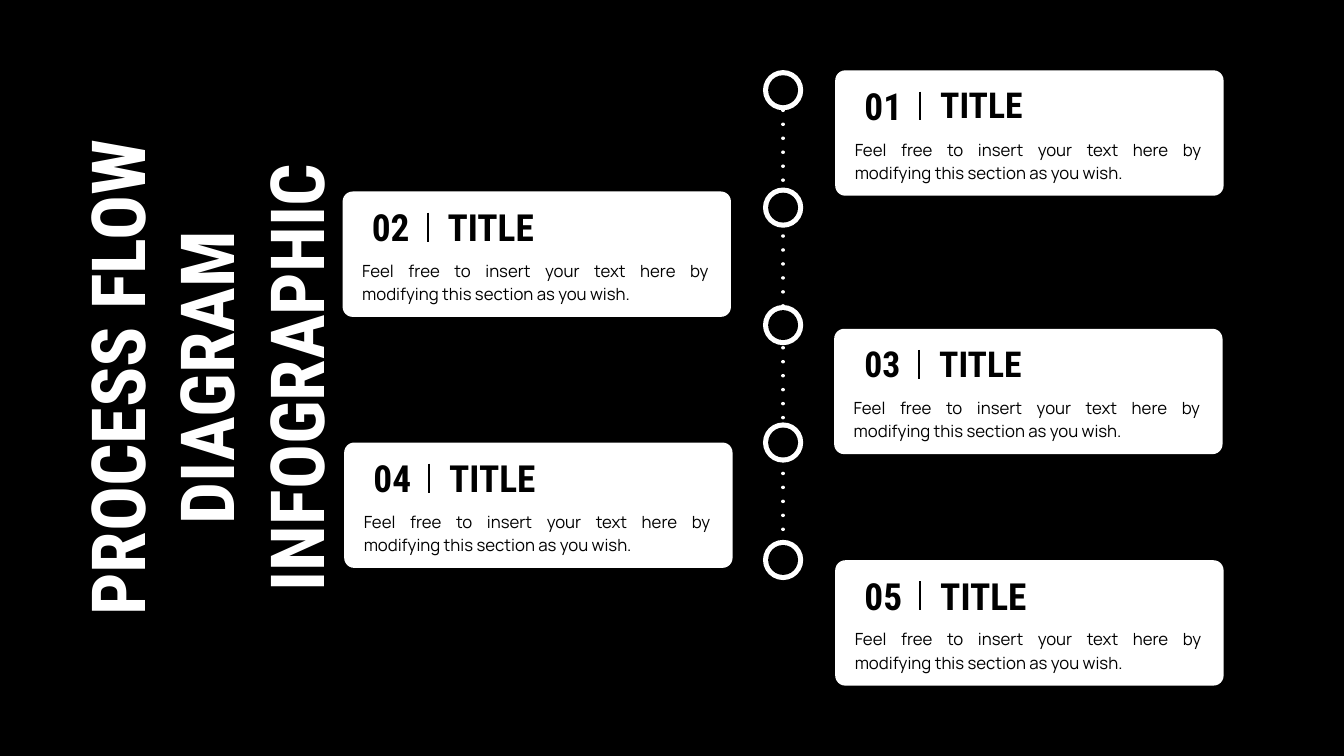
import pptx
import pptx.dml.color
import pptx.enum.dml
import pptx.enum.shapes
import pptx.enum.text
import pptx.oxml
import pptx.oxml.ns
import pptx.util

Cm = pptx.util.Cm
Pt = pptx.util.Pt
BLACK = pptx.dml.color.RGBColor(0, 0, 0)
WHITE = pptx.dml.color.RGBColor(255, 255, 255)
SHAPES = pptx.enum.shapes.MSO_SHAPE
ALIGN = pptx.enum.text.PP_ALIGN
HEADING_FONT = "Roboto Condensed"
BODY_FONT = "Manrope"
DESCRIPTION = "Feel free to insert your text here by modifying this section as you wish."

FRAME_FORMAT = {
    "margin_left": 0,
    "margin_top": 0,
    "margin_right": 0,
    "margin_bottom": 0,
    "word_wrap": True,
    "vertical_anchor": pptx.enum.text.MSO_ANCHOR.TOP,
    "auto_size": pptx.enum.text.MSO_AUTO_SIZE.SHAPE_TO_FIT_TEXT,
}


def write_text(shape, text, color, paragraph_format, font_format):
    frame = shape.text_frame
    for name, value in FRAME_FORMAT.items():
        setattr(frame, name, value)
    paragraph = frame.paragraphs[0]
    for name, value in paragraph_format.items():
        setattr(paragraph, name, value)
    run = paragraph.add_run()
    run.text = text
    for name, value in font_format.items():
        setattr(run.font, name, value)
    run.font.color.rgb = color


def add_line(shapes, x, top, bottom, color, width):
    line = shapes.add_connector(
        pptx.enum.shapes.MSO_CONNECTOR.STRAIGHT, Cm(x), Cm(top), Cm(x), Cm(bottom)
    )
    line.line.color.rgb = color
    line.line.width = Pt(width)
    properties = line._element.spPr
    properties.append(pptx.oxml.parse_xml(f'<a:effectLst {pptx.oxml.ns.nsdecls("a")}/>'))
    return line


presentation = pptx.Presentation()
presentation.slide_width = Cm(50.8)
presentation.slide_height = Cm(28.58)
slide = presentation.slides.add_slide(presentation.slide_layouts[5])
slide.background.fill.solid()
slide.background.fill.fore_color.rgb = BLACK

title = slide.shapes.title
title_format = {
    "left": Cm(-5.87),
    "top": Cm(11.38),
    "width": Cm(22.86),
    "height": Cm(5.79),
    "rotation": 270,
}
for name, value in title_format.items():
    setattr(title, name, value)
write_text(
    title,
    "PROCESS FLOW DIAGRAM INFOGRAPHIC",
    WHITE,
    {"alignment": ALIGN.CENTER},
    {"name": HEADING_FONT, "size": Pt(80), "bold": True},
)

timeline_x, first_y, step_y = 29.6, 3.41, 4.44
timeline = add_line(slide.shapes, timeline_x, 4.17, 20.5, WHITE, 3.75)
timeline.line.dash_style = pptx.enum.dml.MSO_LINE.ROUND_DOT
dash = timeline._element.find(".//" + pptx.oxml.ns.qn("a:prstDash"))
dash.set("val", "dot")
dash.getparent().set("cap", "rnd")

for diameter, color in ((1.52, WHITE), (1.13, BLACK)):
    for index in range(5):
        circle = slide.shapes.add_shape(
            SHAPES.OVAL,
            Cm(timeline_x - diameter / 2),
            Cm(first_y + index * step_y - diameter / 2),
            Cm(diameter),
            Cm(diameter),
        )
        circle.shadow.inherit = False
        circle.fill.solid()
        circle.fill.fore_color.rgb = color
        circle.line.fill.background()

cards = [
    ("01", 31.57, 2.66, 40, 38.2),
    ("02", 12.95, 7.24, 40, 40),
    ("03", 31.53, 12.43, 38.2, 38.2),
    ("04", 13.01, 16.73, 40, 40),
    ("05", 31.57, 21.18, 40, 40),
]
for number, left, top, number_size, heading_size in cards:
    card = slide.shapes.add_shape(
        SHAPES.ROUNDED_RECTANGLE, Cm(left), Cm(top), Cm(14.68), Cm(4.74)
    )
    card.adjustments[0] = 0.08
    card.shadow.inherit = False
    card.fill.solid()
    card.fill.fore_color.rgb = WHITE
    card.line.fill.background()

    add_line(slide.shapes, left + 3.22, top + 0.8, top + 1.89, BLACK, 2.25)

    texts = [
        (number, 0.74, 0.49, 2.16, 1.7, {"alignment": ALIGN.CENTER},
         {"name": HEADING_FONT, "size": Pt(number_size), "bold": True}),
        ("TITLE", 3.97, 0.49, 9.88, 1.7, {"alignment": ALIGN.LEFT},
         {"name": HEADING_FONT, "size": Pt(heading_size), "bold": True}),
        (DESCRIPTION, 0.74, 2.49, 13.1, 1.65,
         {"alignment": ALIGN.JUSTIFY, "line_spacing": 1.15},
         {"name": BODY_FONT, "size": Pt(18)}),
    ]
    for text, offset_x, offset_y, width, height, paragraph_format, font_format in texts:
        box = slide.shapes.add_textbox(
            Cm(left + offset_x), Cm(top + offset_y), Cm(width), Cm(height)
        )
        write_text(box, text, BLACK, paragraph_format, font_format)

presentation.save("out.pptx")
